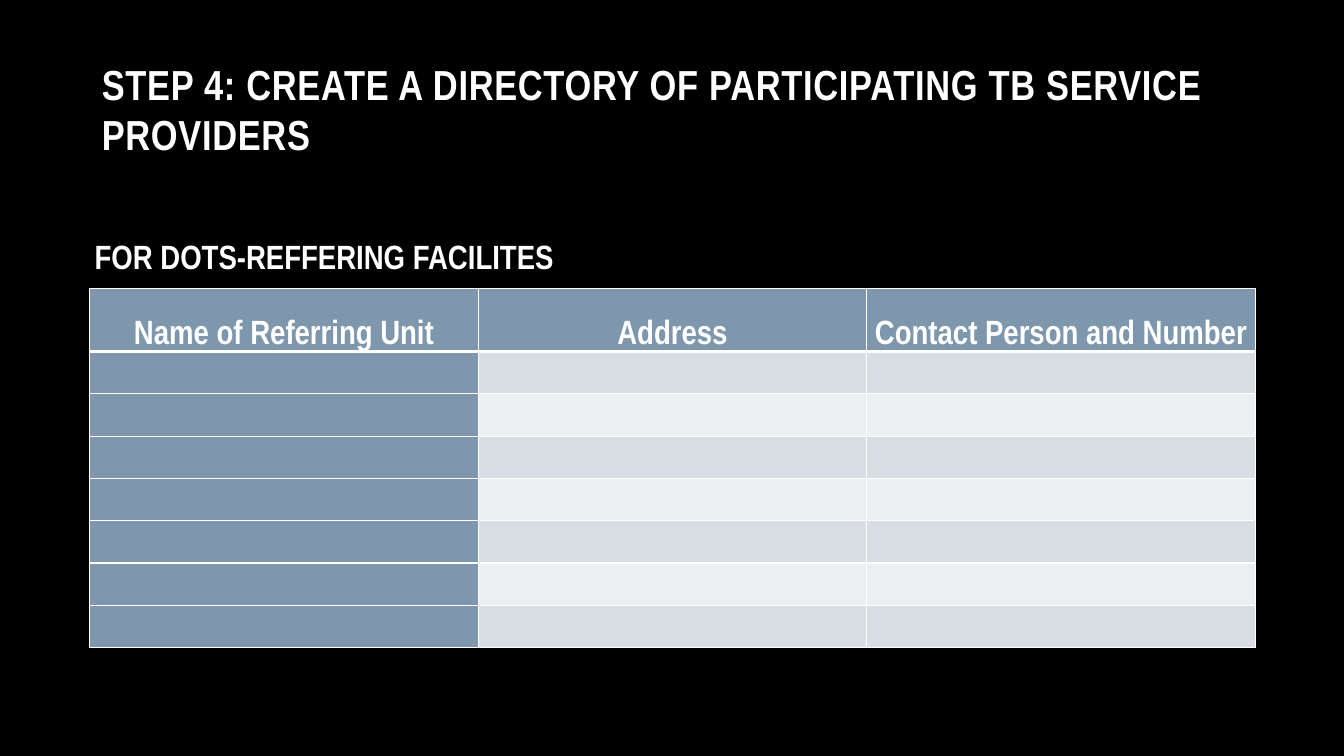
"""Build the slide with the directory table of referring TB facilities."""
from lxml.etree import SubElement
from pptx import Presentation
from pptx.dml.color import RGBColor
from pptx.enum.text import MSO_ANCHOR, MSO_AUTO_SIZE, PP_ALIGN
from pptx.oxml.ns import qn
from pptx.util import Inches, Pt

TITLE = "STEP 4: CREATE A DIRECTORY OF PARTICIPATING TB SERVICE PROVIDERS"
SUBTITLE = "FOR DOTS-REFFERING FACILITES"
HEADINGS = ["Name of Referring Unit", "Address", "Contact Person and Number"]
EMPTY_ROWS = 7

FONT = "Arial Narrow"
BLACK = RGBColor(0x00, 0x00, 0x00)
WHITE = RGBColor(0xFF, 0xFF, 0xFF)
STEEL = RGBColor(0x7E, 0x97, 0xAD)
BANDS = [RGBColor(0xEC, 0xEF, 0xF1), RGBColor(0xD8, 0xDD, 0xE3)]

TABLE_LEFT, TABLE_TOP, TABLE_WIDTH = 0.89, 2.86, 11.56
HEADING_HEIGHT, ROW_HEIGHT = 0.62, 0.42


def style(paragraph, size):
    for run in paragraph.runs:
        run.font.name = FONT
        run.font.size = Pt(size)
        run.font.bold = True
        run.font.color.rgb = WHITE


def add_borders(cell, bottom_width):
    properties = cell._tc.get_or_add_tcPr()
    widths = {"a:lnL": 1, "a:lnR": 1, "a:lnT": 1, "a:lnB": bottom_width}
    for position, (side, width) in enumerate(widths.items()):
        line = SubElement(properties, qn(side), w=str(Pt(width)))
        fill = SubElement(line, qn("a:solidFill"))
        SubElement(fill, qn("a:srgbClr"), val=str(WHITE))
        properties.insert(position, line)


def add_title(slide):
    title = slide.shapes.title
    title.left, title.top = Inches(0.91), Inches(0.38)
    title.width, title.height = Inches(11.56), Inches(1.25)
    frame = title.text_frame
    frame.text = TITLE
    frame.auto_size = MSO_AUTO_SIZE.NONE
    frame.vertical_anchor = MSO_ANCHOR.BOTTOM
    heading = frame.paragraphs[0]
    heading.alignment = PP_ALIGN.LEFT
    style(heading, 30)
    heading.runs[0]._r.get_or_add_rPr().set("spc", "50")


def add_subtitle(slide):
    box = slide.shapes.add_textbox(Inches(0.84), Inches(2.29), Inches(5.84), Inches(0.5))
    frame = box.text_frame
    frame.word_wrap = True
    frame.text = SUBTITLE
    style(frame.paragraphs[0], 24)


def add_directory(slide):
    heights = [HEADING_HEIGHT] + [ROW_HEIGHT] * EMPTY_ROWS
    directory = slide.shapes.add_table(
        len(heights), len(HEADINGS), Inches(TABLE_LEFT), Inches(TABLE_TOP),
        Inches(TABLE_WIDTH), Inches(sum(heights))).table
    directory.first_col = True
    for row, height in enumerate(heights):
        directory.rows[row].height = Inches(height)
        for column, heading in enumerate(HEADINGS):
            cell = directory.cell(row, column)
            cell.fill.solid()
            cell.fill.fore_color.rgb = STEEL if row == 0 or column == 0 else BANDS[row % 2]
            add_borders(cell, 3 if row == 0 else 1)
            if row == 0:
                cell.margin_left = cell.margin_right = Inches(0.07)
                cell.margin_top = cell.margin_bottom = 0
                cell.text_frame.text = heading
                label = cell.text_frame.paragraphs[0]
                label.alignment = PP_ALIGN.CENTER
                label.line_spacing = 2.0
                style(label, 24)


def main():
    deck = Presentation()
    deck.slide_width, deck.slide_height = Inches(13.33), Inches(7.5)
    slide = deck.slides.add_slide(deck.slide_layouts[5])
    slide.background.fill.solid()
    slide.background.fill.fore_color.rgb = BLACK
    add_title(slide)
    add_directory(slide)
    add_subtitle(slide)
    deck.save("out.pptx")


if __name__ == "__main__":
    main()
